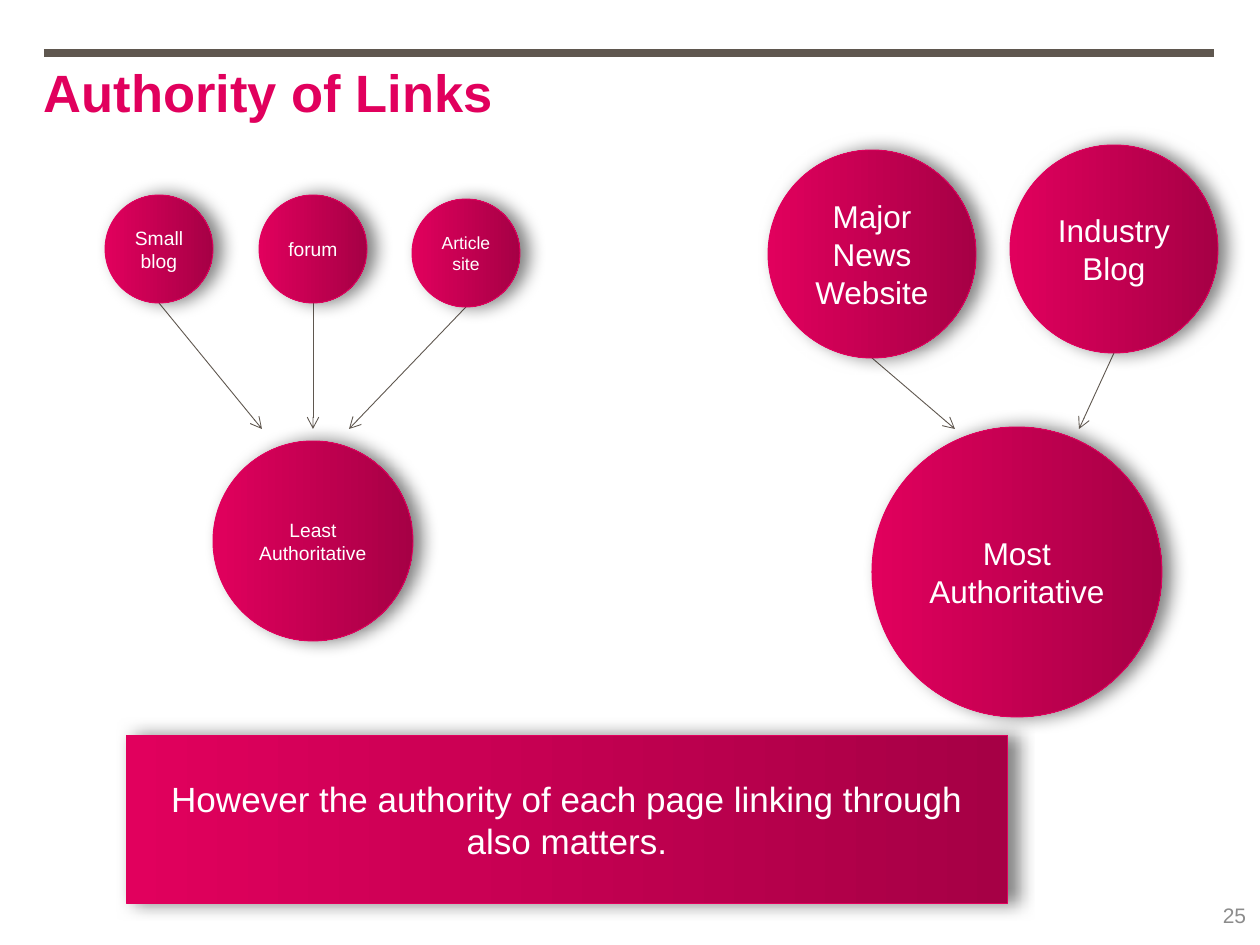
from dataclasses import dataclass

from lxml import etree
from pptx import Presentation
from pptx.dml.color import RGBColor
from pptx.enum.shapes import MSO_CONNECTOR, MSO_SHAPE
from pptx.enum.text import MSO_ANCHOR, PP_ALIGN
from pptx.oxml.ns import qn
from pptx.util import Pt

OVAL, RECT = MSO_SHAPE.OVAL, MSO_SHAPE.RECTANGLE
STRAIGHT = MSO_CONNECTOR.STRAIGHT
TOP, MIDDLE = MSO_ANCHOR.TOP, MSO_ANCHOR.MIDDLE
LEFT, CENTER = PP_ALIGN.LEFT, PP_ALIGN.CENTER
EMU_PER_PX = 914400 / 126


@dataclass(frozen=True)
class Theme:
    font: str = "Arial"
    pink: str = "E1005D"
    dark_pink: str = "A60045"
    brown: str = "5F574F"
    grey: str = "8C8C8C"
    white: str = "FFFFFF"
    shadow: str = "000000"
    title: int = 30
    banner: int = 20
    large: int = 18
    number: int = 12
    small: int = 11
    tiny: int = 10


THEME = Theme()


def px(n):
    return round(n * EMU_PER_PX)


def rgb(color):
    return RGBColor.from_string(color)


def write(tf, text, size, color, align=CENTER, bold=False, spacing=None):
    """Fill a text frame, one paragraph for each line of text."""
    tf.word_wrap = True
    for i, line in enumerate(text.split("\n")):
        p = tf.paragraphs[0] if i == 0 else tf.add_paragraph()
        p.alignment = align
        if spacing:
            p.line_spacing = spacing
        r = p.add_run()
        r.text = line
        r.font.name = THEME.font
        r.font.size = Pt(size)
        r.font.bold = bold
        r.font.color.rgb = rgb(color)


def add_text(s, box, text, size, color, anchor=TOP, **style):
    tf = s.shapes.add_textbox(*map(px, box)).text_frame
    tf.margin_left = tf.margin_top = tf.margin_right = tf.margin_bottom = 0
    tf.vertical_anchor = anchor
    write(tf, text, size, color, **style)


def add_shadow(sp):
    """Cast a soft half-transparent shadow to the right."""
    sp.shadow.inherit = False
    effects = sp._element.spPr.find(qn("a:effectLst"))
    outer = etree.SubElement(effects, qn("a:outerShdw"), blurRad=str(Pt(10)),
                             dist=str(Pt(5)), dir="0", algn="ctr", rotWithShape="0")
    color = etree.SubElement(outer, qn("a:srgbClr"), val=THEME.shadow)
    etree.SubElement(color, qn("a:alpha"), val="50000")


def add_block(s, kind, box, text, size):
    sp = s.shapes.add_shape(kind, *map(px, box))
    sp.fill.gradient()
    sp.fill.gradient_angle = 0
    for stop, color in zip(sp.fill.gradient_stops, (THEME.pink, THEME.dark_pink)):
        stop.color.rgb = rgb(color)
    sp.line.color.rgb = rgb(THEME.pink)
    sp.line.width = Pt(0.5)
    add_shadow(sp)
    sp.text_frame.vertical_anchor = MIDDLE
    write(sp.text_frame, text, size, THEME.white)


def add_circle(s, x, y, diameter, text, size):
    add_block(s, OVAL, (x, y, diameter, diameter), text, size)


def add_line(s, start, end, width, arrow=False):
    cxn = s.shapes.add_connector(STRAIGHT, *map(px, (*start, *end)))
    cxn.line.color.rgb = rgb(THEME.brown)
    cxn.line.width = Pt(width)
    if arrow:
        etree.SubElement(cxn.line._get_or_add_ln(), qn("a:tailEnd"), type="arrow")
    etree.SubElement(cxn._element.spPr, qn("a:effectLst"))


def add_sources(s, diameter, sources, tip_y):
    """Draw linking pages, each with an arrow from its bottom to tip_y."""
    for x, y, text, size, tip_x in sources:
        add_line(s, (x + diameter / 2, y + diameter), (tip_x, tip_y), 0.5, arrow=True)
        add_circle(s, x, y, diameter, text, size)


def main():
    prs = Presentation()
    prs.slide_width, prs.slide_height = px(1260), px(945)
    s = prs.slides.add_slide(prs.slide_layouts[6])

    add_line(s, (44, 53), (1214, 53), 4.5)
    add_text(s, (44, 54, 745, 140), "Authority of Links", THEME.title, THEME.pink,
             align=LEFT, bold=True, spacing=1.1)

    add_circle(s, 213, 441, 200, "Least Authoritative", THEME.small)
    add_circle(s, 872, 427, 290, "Most Authoritative", THEME.large)
    add_sources(s, 108, [
        (105, 195, "Small blog", THEME.small, 262),
        (259, 195, "forum", THEME.small, 313),
        (412, 199, "Article\nsite", THEME.tiny, 349),
    ], tip_y=429)
    add_sources(s, 208, [
        (768, 150, "Major News Website", THEME.large, 955),
        (1010, 145, "Industry Blog", THEME.large, 1079),
    ], tip_y=429)

    add_block(s, RECT, (126, 735, 882, 168),
              "However the authority of each page linking through also matters.",
              THEME.banner)
    add_text(s, (1217, 896, 35, 38), "25", THEME.number, THEME.grey, anchor=MIDDLE)
    prs.save("out.pptx")


if __name__ == "__main__":
    main()
